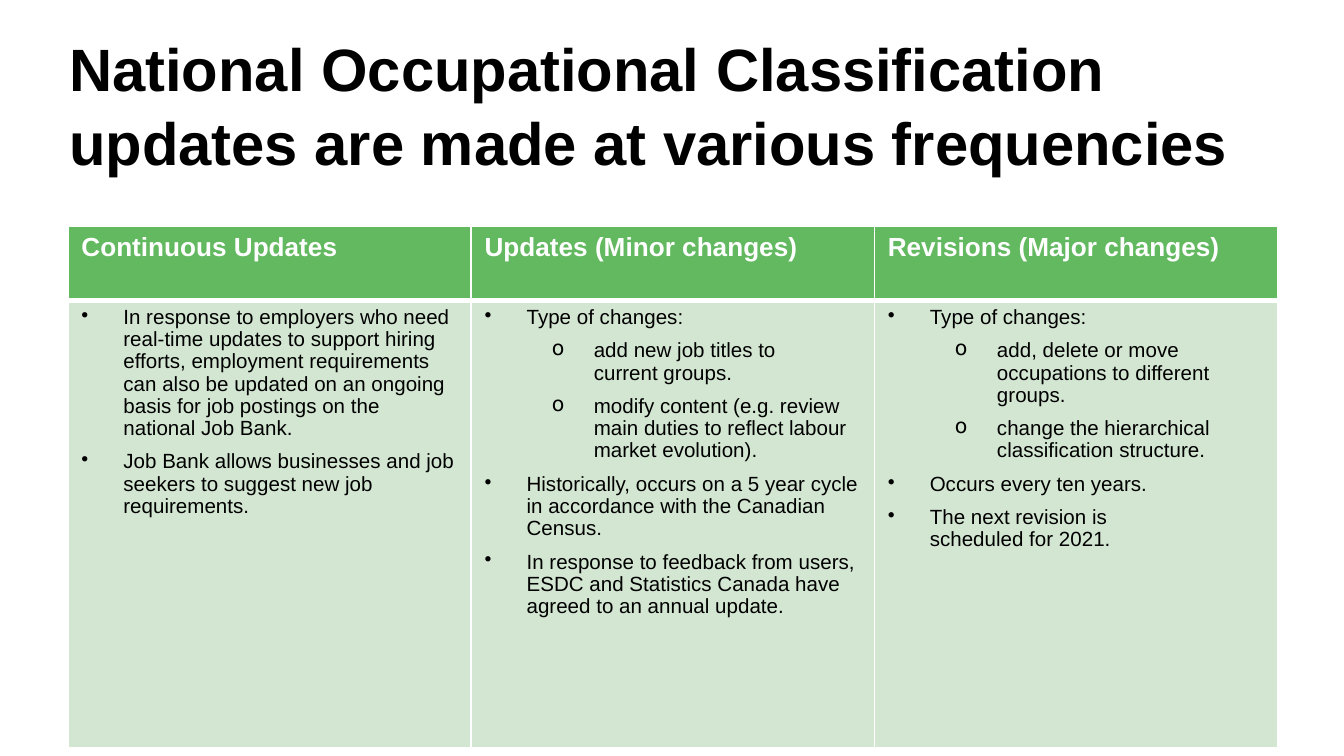
from copy import deepcopy

from pptx import Presentation
from pptx.dml.color import RGBColor
from pptx.enum.text import MSO_ANCHOR as Anchor
from pptx.oxml.ns import qn
from pptx.oxml.xmlchemy import OxmlElement as Element
from pptx.util import Pt

BLACK = RGBColor(0x00, 0x00, 0x00)
WHITE = RGBColor(0xFF, 0xFF, 0xFF)
GREEN = RGBColor(0x62, 0xB9, 0x5F)
PALE_GREEN = RGBColor(0xD3, 0xE6, 0xD2)

TITLE = "National Occupational Classification updates are made at various frequencies"
TITLE_FORMAT = {"name": "Arial", "size": Pt(32), "bold": True}
HEADER_FORMAT = {"name": "Arial", "size": Pt(14), "bold": True}
BODY_FORMAT = {"name": "Arial", "size": Pt(11), "bold": False}
BODY_SPACING = {"line_spacing": 0.97, "space_after": Pt(6)}
CELL_MARGINS = {
    "margin_left": Pt(7.2),
    "margin_right": Pt(7.2),
    "margin_top": Pt(3.6),
    "margin_bottom": Pt(3.6),
}
BULLETS = ["•", "o"]
HANGING = Pt(22.5)
LEVEL_STEP = Pt(36)
COLUMN_WIDTH = Pt(216)
ROW_HEIGHTS = [Pt(39.6), Pt(240)]
THIN, THICK = Pt(1), Pt(3)

COLUMNS = {
    "Continuous Updates": [
        (0, "In response to employers who need real-time updates to support hiring "
            "efforts, employment requirements can also be updated on an ongoing "
            "basis for job postings on the national Job Bank."),
        (0, "Job Bank allows businesses and job seekers to suggest new job requirements."),
    ],
    "Updates (Minor changes)": [
        (0, "Type of changes:"),
        (1, "add new job titles to \ncurrent groups."),
        (1, "modify content (e.g. review main duties to reflect labour market evolution)."),
        (0, "Historically, occurs on a 5 year cycle in accordance with the Canadian Census."),
        (0, "In response to feedback from users, ESDC and Statistics Canada have "
            "agreed to an annual update."),
    ],
    "Revisions (Major changes)": [
        (0, "Type of changes:"),
        (1, "add, delete or move occupations to different groups."),
        (1, "change the hierarchical classification structure."),
        (0, "Occurs every ten years."),
        (0, "The next revision is \nscheduled for 2021."),
    ],
}


def set_values(target, values):
    for name, value in values.items():
        setattr(target, name, value)


def write(para, text, values, color):
    para.text = text
    for span in para.runs:
        set_values(span.font, values)
        span.font.color.rgb = color
    for line_break in para._p.findall(qn("a:br")):
        line_break.insert(0, deepcopy(para.runs[0]._r.rPr))


def add_bullet(para, level):
    para.level = level
    properties = para._p.get_or_add_pPr()
    properties.set("marL", str(HANGING + level * LEVEL_STEP))
    properties.set("indent", str(-HANGING))
    bullet = Element("a:buChar")
    bullet.set("char", BULLETS[level])
    properties.append(bullet)
    set_values(para, BODY_SPACING)


def add_borders(cell, widths):
    properties = cell._tc.get_or_add_tcPr()
    for index, (side, width) in enumerate(widths.items()):
        line = Element(f"a:ln{side}")
        line.set("w", str(width))
        fill = Element("a:solidFill")
        color = Element("a:srgbClr")
        color.set("val", str(WHITE))
        fill.append(color)
        line.append(fill)
        properties.insert(index, line)


def style_cell(cell, fill, top, bottom):
    set_values(cell, CELL_MARGINS)
    cell.fill.solid()
    cell.fill.fore_color.rgb = fill
    add_borders(cell, {"L": THIN, "R": THIN, "T": top, "B": bottom})


def add_title(page):
    box = page.shapes.add_textbox(Pt(30), Pt(21.6), Pt(671), Pt(68))
    frame = box.text_frame
    set_values(frame, {"word_wrap": True, "vertical_anchor": Anchor.MIDDLE})
    para = frame.paragraphs[0]
    para.line_spacing = 1.03
    write(para, TITLE, TITLE_FORMAT, BLACK)


def add_updates_table(page):
    table = page.shapes.add_table(
        len(ROW_HEIGHTS), len(COLUMNS), Pt(36.4), Pt(121.2),
        COLUMN_WIDTH * len(COLUMNS), sum(ROW_HEIGHTS),
    ).table
    for row, height in zip(table.rows, ROW_HEIGHTS):
        row.height = height
    for index, (heading, items) in enumerate(COLUMNS.items()):
        table.columns[index].width = COLUMN_WIDTH
        header, body = table.cell(0, index), table.cell(1, index)
        style_cell(header, GREEN, THIN, THICK)
        write(header.text_frame.paragraphs[0], heading, HEADER_FORMAT, WHITE)
        style_cell(body, PALE_GREEN, THICK, THIN)
        frame = body.text_frame
        for number, (level, text) in enumerate(items):
            para = frame.add_paragraph() if number else frame.paragraphs[0]
            add_bullet(para, level)
            write(para, text, BODY_FORMAT, BLACK)


def main():
    deck = Presentation()
    deck.slide_width, deck.slide_height = Pt(720), Pt(405)
    page = deck.slides.add_slide(deck.slide_layouts[6])
    add_title(page)
    add_updates_table(page)
    deck.save("out.pptx")


if __name__ == "__main__":
    main()
